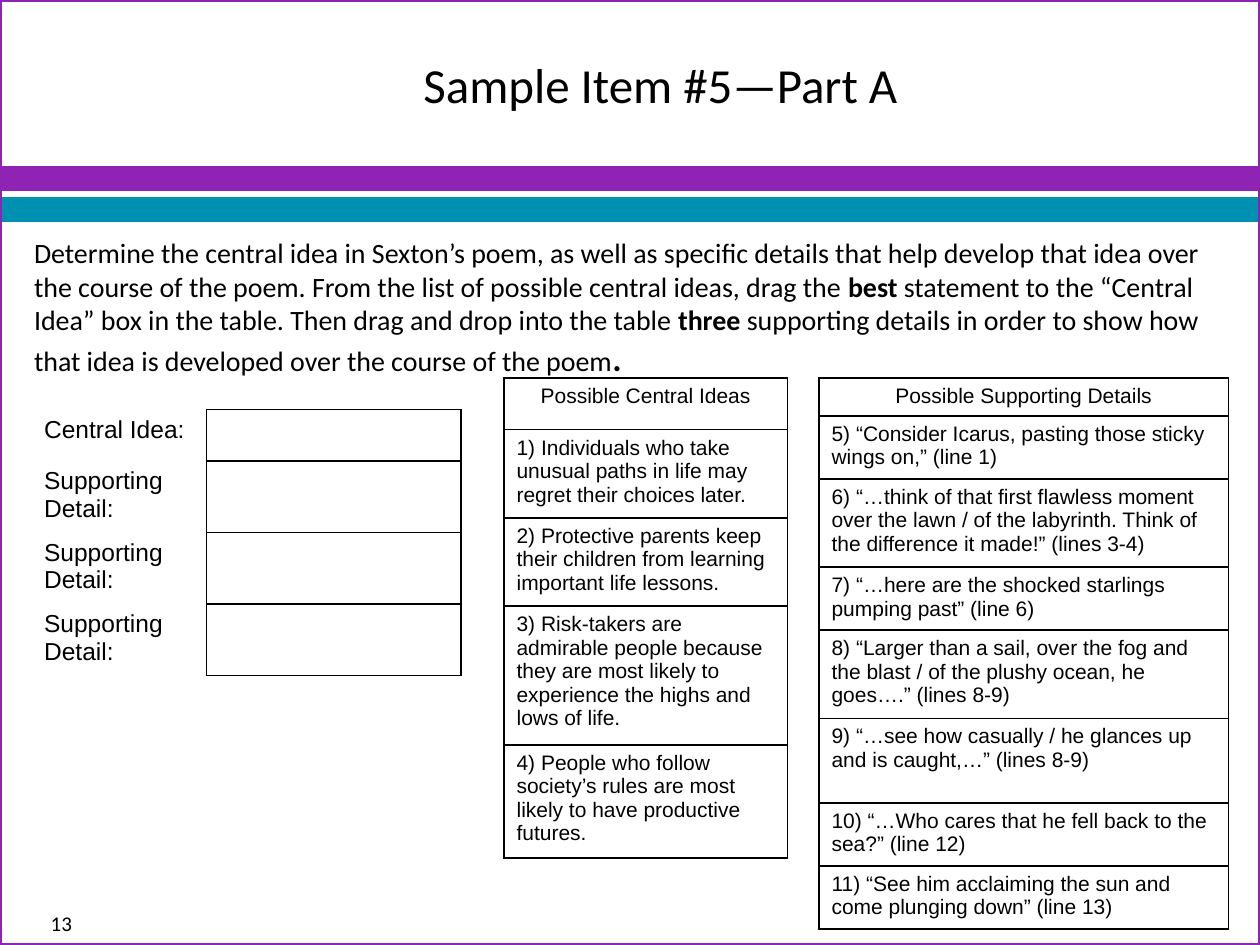
import pptx
import pptx.util
import pptx.dml.color
import pptx.enum.shapes
import pptx.enum.text
import pptx.oxml.ns
import lxml.etree

Inches = pptx.util.Inches
Pt = pptx.util.Pt
ALIGN = pptx.enum.text.PP_ALIGN
ANCHOR = pptx.enum.text.MSO_ANCHOR
BLACK = pptx.dml.color.RGBColor(0x00, 0x00, 0x00)
PURPLE = pptx.dml.color.RGBColor(0x8F, 0x23, 0xB3)
TEAL = pptx.dml.color.RGBColor(0x00, 0x91, 0xB2)

TASK = [
    ("Determine the central idea in Sexton’s poem, as well as specific details "
     "that help develop that idea over the course of the poem. From the list of "
     "possible central ideas, drag the ", False, 16),
    ("best", True, 16),
    (" statement to the “Central Idea” box in the table. Then drag and drop "
     "into the table ", False, 16),
    ("three ", True, 16),
    ("supporting details in order to show how that idea is developed over the "
     "course of the poem", False, 16),
    (".", True, 20),
]
LABELS = [("Central Idea:", 0.41)] + [("Supporting Detail:", 0.54)] * 3
IDEAS = [
    ("Possible Central Ideas", 0.41),
    ("1) Individuals who take unusual paths in life may regret their choices later.", 0.66),
    ("2) Protective parents keep their children from learning important life lessons.", 0.66),
    ("3) Risk-takers are admirable people because they are most likely to "
     "experience the highs and lows of life.", 1.03),
    ("4) People who follow society’s rules are most likely to have productive futures.", 0.85),
]
DETAILS = [
    ("Possible Supporting Details", 0.29),
    ("5) “Consider Icarus, pasting those sticky wings on,” (line 1)", 0.48),
    ("6) “…think of that first flawless moment over the lawn / of the labyrinth. "
     "Think of the difference it made!” (lines 3-4)", 0.66),
    ("7) “…here are the shocked starlings pumping past” (line 6)", 0.47),
    ("8) “Larger than a sail, over the fog and the blast / of the plushy ocean, "
     "he goes….” (lines 8-9)", 0.66),
    ("9) “…see how casually / he glances up and is caught,…” (lines 8-9)", 0.67),
    ("10) “…Who cares that he fell back to the sea?” (line 12)", 0.48),
    ("11) “See him acclaiming the sun and come plunging down” (line 13)", 0.47),
]


def apply(item, form):
    for key, value in form.items():
        setattr(item, key, value)


def place(shape, *box):
    apply(shape, dict(zip(("left", "top", "width", "height"), map(Inches, box))))


def style(font, size, name="Calibri", bold=False):
    apply(font, {"size": Pt(size), "name": name, "bold": bold})
    font.color.rgb = BLACK


def add_rect(slide, box, line, width, fill=None):
    kind = pptx.enum.shapes.MSO_SHAPE.RECTANGLE
    rect = slide.shapes.add_shape(kind, *map(Inches, box))
    rect.shadow.inherit = False
    if fill is None:
        rect.fill.background()
    else:
        rect.fill.solid()
        rect.fill.fore_color.rgb = fill
    rect.line.color.rgb = line
    rect.line.width = Pt(width)


def fill_title(title):
    place(title, 3.08, 0, 6.92, 1.33)
    apply(title.text_frame, {"text": "Sample Item #5—Part A", "word_wrap": True,
                             "vertical_anchor": ANCHOR.MIDDLE})
    para = title.text_frame.paragraphs[0]
    para.alignment = ALIGN.LEFT
    para._p.get_or_add_pPr().set("marL", str(Inches(0.18)))
    style(para.runs[0].font, 28)


def fill_body(body):
    place(body, 0.17, 1.82, 9.67, 5.26)
    frame = body.text_frame
    apply(frame, {"word_wrap": True, "vertical_anchor": ANCHOR.TOP,
                  "auto_size": pptx.enum.text.MSO_AUTO_SIZE.NONE})
    para = frame.paragraphs[0]
    apply(para, {"alignment": ALIGN.LEFT, "space_before": Pt(0)})
    props = para._p.get_or_add_pPr()
    apply_xml = {"marL": "0", "indent": "0"}
    for key, value in apply_xml.items():
        props.set(key, value)
    lxml.etree.SubElement(props, pptx.oxml.ns.qn("a:buNone"))
    for text, bold, size in TASK:
        run = para.add_run()
        run.text = text
        style(run.font, size, bold=bold)


def add_page(slide):
    box = slide.shapes.add_textbox(*map(Inches, (0, 7.18, 0.67, 0.32)))
    apply(box.text_frame, {"text": "13", "word_wrap": True})
    para = box.text_frame.paragraphs[0]
    para.alignment = ALIGN.RIGHT
    style(para.runs[0].font, 12)


def set_lines(cell, sides):
    qn = pptx.oxml.ns.qn
    props = cell._tc.get_or_add_tcPr()
    for side in "LRTB":
        line = lxml.etree.SubElement(props, qn("a:ln" + side), w=str(Pt(1)))
        if side in sides:
            fill = lxml.etree.SubElement(line, qn("a:solidFill"))
            lxml.etree.SubElement(fill, qn("a:srgbClr"), val=str(BLACK))
        else:
            lxml.etree.SubElement(line, qn("a:noFill"))
    cell.fill.background()


def add_grid(slide, left, top, widths, rows, size, sides="LRTB", head=False):
    high = sum(height for _, height in rows)
    shape = slide.shapes.add_table(len(rows), len(widths), Inches(left), Inches(top),
                                   Inches(sum(widths)), Inches(high))
    grid = shape.table
    apply(grid, {"first_row": False, "horz_banding": False})
    for col, width in zip(grid.columns, widths):
        col.width = Inches(width)
    for i, (text, height) in enumerate(rows):
        grid.rows[i].height = Inches(height)
        for j in range(len(widths)):
            set_lines(grid.cell(i, j), "LRTB" if j else sides)
        cell = grid.cell(i, 0)
        cell.text = text
        para = cell.text_frame.paragraphs[0]
        para.alignment = ALIGN.CENTER if head and i == 0 else ALIGN.LEFT
        style(para.runs[0].font, size, "Arial")


def main():
    deck = pptx.Presentation()
    apply(deck, {"slide_width": Inches(10), "slide_height": Inches(7.5)})
    slide = deck.slides.add_slide(deck.slide_layouts[1])
    for top, tint in ((1.33, PURPLE), (1.58, TEAL)):
        add_rect(slide, (0, top, 10, 0.17), tint, 2, tint)
    add_rect(slide, (0, 0, 10, 7.5), PURPLE, 2.25)
    fill_title(slide.shapes.title)
    fill_body(slide.placeholders[1])
    add_page(slide)
    add_grid(slide, 0.25, 3.25, (1.39, 2.02), LABELS, 14, sides="R")
    add_grid(slide, 4, 3, (2.25,), IDEAS, 12, head=True)
    add_grid(slide, 6.5, 3, (3.25,), DETAILS, 12, head=True)
    deck.save("out.pptx")


if __name__ == "__main__":
    main()
